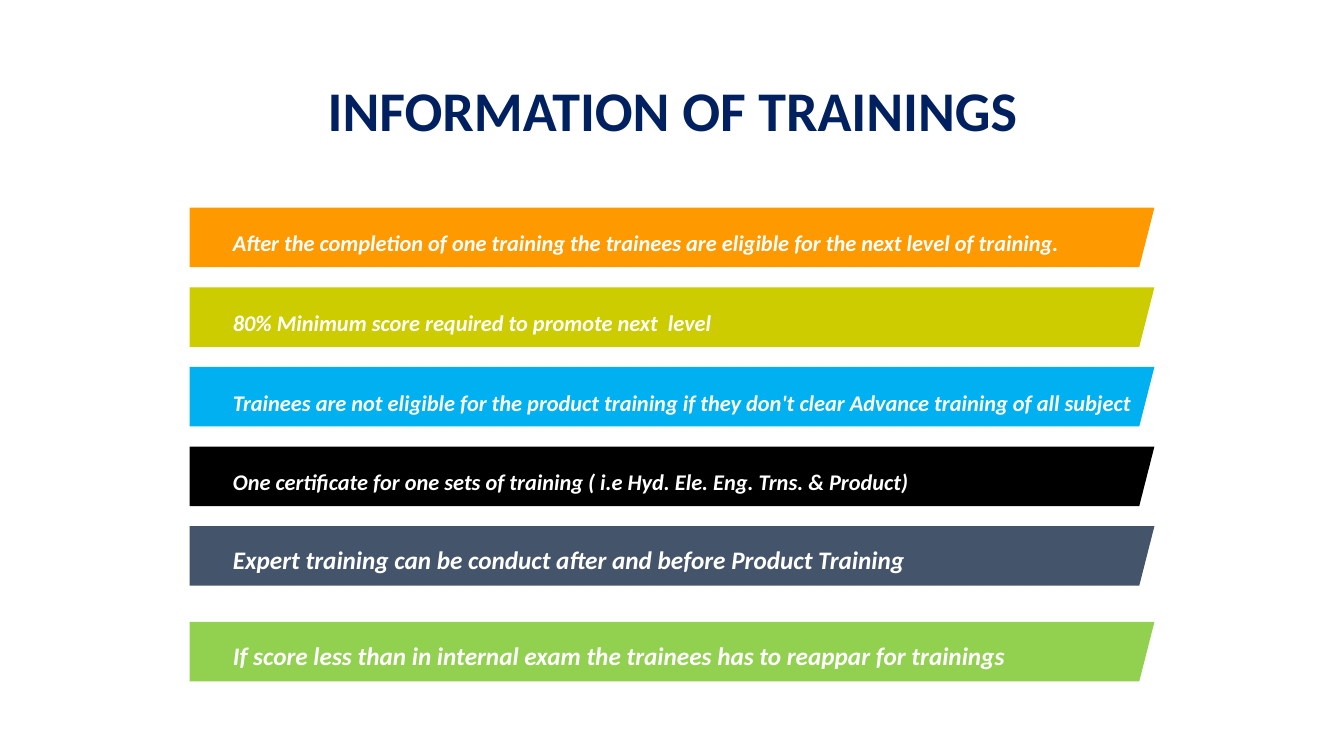
from dataclasses import dataclass

from pptx import Presentation
from pptx.dml.color import RGBColor
from pptx.enum.text import MSO_ANCHOR, PP_ALIGN
from pptx.util import Inches, Pt


@dataclass(frozen=True)
class Theme:
    font: str = "Calibri"
    title_color: str = "002060"
    bar_text_color: str = "FFFFFF"
    orange: str = "FF9900"
    olive: str = "CCCC00"
    blue: str = "00B0F0"
    black: str = "000000"
    slate: str = "44546A"
    green: str = "92D050"
    title_size: int = 40
    small_size: int = 16
    large_size: int = 18


THEME = Theme()
TITLE_ONLY_LAYOUT = 5

BAR_LEFT = 1.88
BAR_WIDTH = 9.57
BAR_HEIGHT = 0.59
BAR_SLANT = 0.15
FIRST_BAR_TOP = 2.06
BAR_STEP = 0.79
LAST_BAR_TOP = 6.17

EVEN_BARS = [
    ("After the completion of one training the trainees are eligible for the next level of training.",
     THEME.orange, THEME.small_size),
    ("80% Minimum score required to promote next  level", THEME.olive, THEME.small_size),
    ("Trainees are not eligible for the product training if they don't clear Advance training of all subject",
     THEME.blue, THEME.small_size),
    ("One certificate for one sets of training ( i.e Hyd. Ele. Eng. Trns. & Product)",
     THEME.black, THEME.small_size),
    ("Expert training can be conduct after and before Product Training", THEME.slate, THEME.large_size),
]
LAST_BAR = ("If score less than in internal exam the trainees has to reappar for trainings",
            THEME.green, THEME.large_size)


def write_text(shape, text, *, size, color, alignment, line_spacing, italic=False):
    frame = shape.text_frame
    frame.word_wrap = True
    frame.vertical_anchor = MSO_ANCHOR.MIDDLE
    paragraph = frame.paragraphs[0]
    paragraph.alignment = alignment
    paragraph.line_spacing = line_spacing
    run = paragraph.add_run()
    run.text = text
    run.font.name = THEME.font
    run.font.size = Pt(size)
    run.font.bold = True
    run.font.italic = italic
    run.font.color.rgb = RGBColor.from_string(color)


def add_title(slide, text):
    title = slide.shapes.title
    title.left, title.top = Inches(0.92), Inches(0.4)
    title.width, title.height = Inches(11.5), Inches(1.45)
    write_text(title, text, size=THEME.title_size, color=THEME.title_color,
               alignment=PP_ALIGN.CENTER, line_spacing=0.9)


def add_bar(slide, top, text, color, size):
    right = BAR_LEFT + BAR_WIDTH
    bottom = top + BAR_HEIGHT
    corners = [(BAR_LEFT, top), (BAR_LEFT, bottom), (right - BAR_SLANT, bottom)]
    builder = slide.shapes.build_freeform(Inches(right), Inches(top))
    builder.add_line_segments([(Inches(x), Inches(y)) for x, y in corners], close=True)
    bar = builder.convert_to_shape()
    bar.shadow.inherit = False
    bar.fill.solid()
    bar.fill.fore_color.rgb = RGBColor.from_string(color)
    bar.line.fill.background()
    frame = bar.text_frame
    frame.margin_left, frame.margin_right = Inches(0.43), Inches(0.1)
    frame.margin_top = frame.margin_bottom = Inches(0.05)
    write_text(bar, text, size=size, color=THEME.bar_text_color,
               alignment=PP_ALIGN.LEFT, line_spacing=Pt(27), italic=True)


def main():
    presentation = Presentation()
    presentation.slide_width = Inches(13.33)
    presentation.slide_height = Inches(7.5)
    slide = presentation.slides.add_slide(presentation.slide_layouts[TITLE_ONLY_LAYOUT])
    add_title(slide, "INFORMATION OF TRAININGS")
    for index, bar in enumerate(EVEN_BARS):
        add_bar(slide, FIRST_BAR_TOP + index * BAR_STEP, *bar)
    add_bar(slide, LAST_BAR_TOP, *LAST_BAR)
    presentation.save("out.pptx")


if __name__ == "__main__":
    main()
